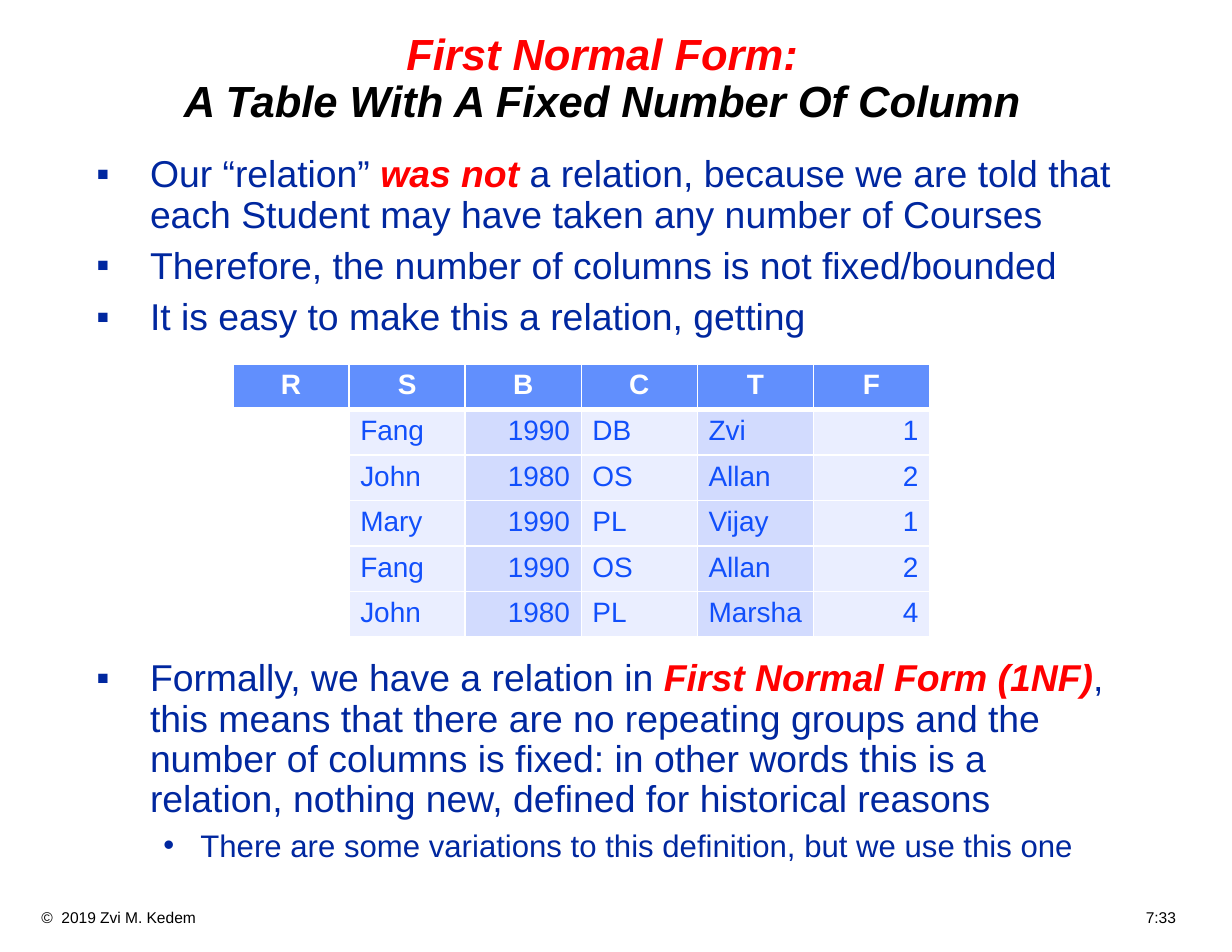
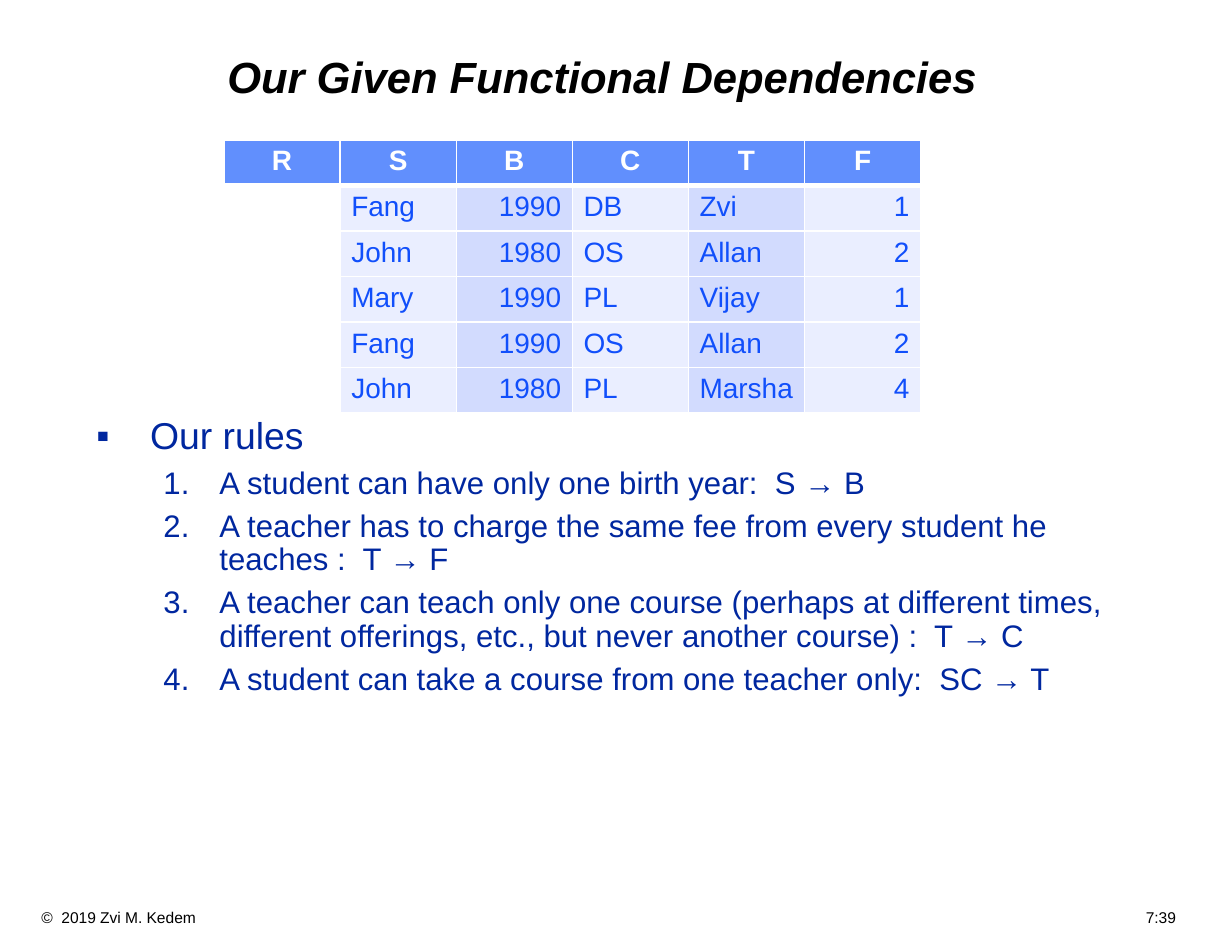
from lxml import etree
from pptx import Presentation
from pptx import util as u
from pptx.dml.color import RGBColor
from pptx.enum import text
from pptx.oxml import ns

colours = {
    "black": "000000", "red": "FF0000", "navy": "00279F", "white": "FFFFFF",
    "header": "618FFD", "cell": "114FFB", "light": "EAEEFF", "dark": "D2DBFE",
}
font_name = "Arial"

relation = [
    ["R", "S", "B", "C", "T", "F"],
    ["", "Fang", "1990", "DB", "Zvi", "1"],
    ["", "John", "1980", "OS", "Allan", "2"],
    ["", "Mary", "1990", "PL", "Vijay", "1"],
    ["", "Fang", "1990", "OS", "Allan", "2"],
    ["", "John", "1980", "PL", "Marsha", "4"],
]
column_fills = ["white", "light", "dark", "light", "dark", "light"]
number_columns = {2, 5}

# kind: size, space before, indent level, left margin, hanging indent, bullet tag, bullet attributes
bullet_styles = {
    "main": (24, 7, 0, 0.48, 0.48, "buChar", {"char": "▪"}),
    "sub": (20, 6, 1, 0.93, 0.33, "buChar", {"char": "•"}),
    "rule": (20, 6, 1, 1.1, 0.5, "buAutoNum", {"type": "arabicPeriod"}),
}

slides = [
    {
        "title": [("First Normal Form:", "red"), ("A Table With A Fixed Number Of Column", "black")],
        "page": "7:33",
        "table": (2.08, 3.25),
        "bodies": [
            (1.33, 1.8, [
                ("main", [("Our “relation” ", False), ("was not ", True),
                          ("a relation, because we are told that each Student may have taken any number of Courses", False)]),
                ("main", [("Therefore, the number of columns is not fixed/bounded", False)]),
                ("main", [("It is easy to make this a relation, getting", False)]),
            ]),
            (5.83, 2.17, [
                ("main", [("Formally, we have a relation in ", False), ("First Normal Form (1NF)", True),
                          (", this means that there are no repeating groups and the number of columns is fixed: "
                           "in other words this is a relation, nothing new, defined for historical reasons", False)]),
                ("sub", [("There are some variations to this definition, but we use this one", False)]),
            ]),
        ],
    },
    {
        "title": [("Our Given Functional Dependencies", "black")],
        "page": "7:39",
        "table": (2, 1.25),
        "bodies": [
            (3.67, 4.33, [
                ("main", [("Our rules", False)]),
                ("rule", [("A student can have only one birth year:  S → B", False)]),
                ("rule", [("A teacher has to charge the same fee from every student he teaches :  T → F", False)]),
                ("rule", [("A teacher can teach only one course (perhaps at different times, different offerings, "
                           "etc., but never another course) :  T → C", False)]),
                ("rule", [("A student can take a course from one teacher only:  SC → T", False)]),
            ]),
        ],
    },
]


def add_text_frame(slide, left, top, width, height, side=0.11, edge=0.06):
    shape = slide.shapes.add_textbox(u.Inches(left), u.Inches(top), u.Inches(width), u.Inches(height))
    frame = shape.text_frame
    frame.word_wrap = True
    frame.margin_left = frame.margin_right = u.Inches(side)
    frame.margin_top = frame.margin_bottom = u.Inches(edge)
    return frame


def set_font(font, size, colour, bold=False, italic=False):
    font.name = font_name
    font.size = u.Pt(size)
    font.bold = bold
    font.italic = italic
    font.color.rgb = RGBColor.from_string(colours[colour])


presentation = Presentation()
presentation.slide_width = u.Inches(11)
presentation.slide_height = u.Inches(8.5)

for content in slides:
    slide = presentation.slides.add_slide(presentation.slide_layouts[6])

    frame = add_text_frame(slide, 0, 8.06, 11, 0.27, side=0.37, edge=0.05)
    paragraph = frame.paragraphs[0]
    paragraph.text = "©  2019 Zvi M. Kedem\t" + content["page"]
    set_font(paragraph.font, 10, "black")
    properties = paragraph._p.get_or_add_pPr()
    tabs = etree.Element(ns.qn("a:tabLst"))
    etree.SubElement(tabs, ns.qn("a:tab"), pos=str(u.Inches(10.13)), algn="r")
    properties.insert(0, tabs)

    frame = add_text_frame(slide, 0.75, 0.25, 9.25, 0.92)
    frame.vertical_anchor = text.MSO_ANCHOR.MIDDLE
    paragraph = frame.paragraphs[0]
    paragraph.alignment = text.PP_ALIGN.CENTER
    paragraph.line_spacing = 0.9
    for index, (line, colour) in enumerate(content["title"]):
        if index:
            paragraph.add_line_break()
        run = paragraph.add_run()
        run.text = line
        set_font(run.font, 28, colour, bold=True, italic=True)

    for top, height, items in content["bodies"]:
        frame = add_text_frame(slide, 0.75, top, 9.33, height)
        for index, (kind, runs) in enumerate(items):
            size, space, level, margin, hanging, tag, attributes = bullet_styles[kind]
            paragraph = frame.add_paragraph() if index else frame.paragraphs[0]
            paragraph.level = level
            paragraph.line_spacing = 0.9
            paragraph.space_before = u.Pt(space)
            properties = paragraph._p.get_or_add_pPr()
            properties.set("marL", str(u.Inches(margin)))
            properties.set("indent", str(-u.Inches(hanging)))
            bullet_colour = etree.SubElement(properties, ns.qn("a:buClr"))
            etree.SubElement(bullet_colour, ns.qn("a:srgbClr"), val=colours["navy"])
            etree.SubElement(properties, ns.qn("a:buFont"), typeface=font_name)
            etree.SubElement(properties, ns.qn("a:" + tag), attributes)
            for words, strong in runs:
                run = paragraph.add_run()
                run.text = words
                set_font(run.font, size, "red" if strong else "navy", bold=strong, italic=strong)

    left, top = content["table"]
    table = slide.shapes.add_table(
        len(relation), len(relation[0]), u.Inches(left), u.Inches(top), u.Inches(6.22), u.Inches(2.44)).table
    for row_index, values in enumerate(relation):
        for column_index, value in enumerate(values):
            is_header = row_index == 0
            cell = table.cell(row_index, column_index)
            cell_properties = cell._tc.get_or_add_tcPr()
            widths = {"L": 1, "R": 1, "T": 3 if row_index == 1 else 1, "B": 3 if is_header else 1}
            for side, width in widths.items():
                border = etree.SubElement(cell_properties, ns.qn("a:ln" + side), w=str(u.Pt(width)))
                border_fill = etree.SubElement(border, ns.qn("a:solidFill"))
                etree.SubElement(border_fill, ns.qn("a:srgbClr"), val=colours["white"])
            cell.fill.solid()
            fill = "header" if is_header else column_fills[column_index]
            cell.fill.fore_color.rgb = RGBColor.from_string(colours[fill])
            cell.text = value
            paragraph = cell.text_frame.paragraphs[0]
            set_font(paragraph.font, 18, "white" if is_header else "cell", bold=is_header)
            if is_header:
                paragraph.alignment = text.PP_ALIGN.CENTER
            elif column_index in number_columns:
                paragraph.alignment = text.PP_ALIGN.RIGHT

presentation.save("out.pptx")
